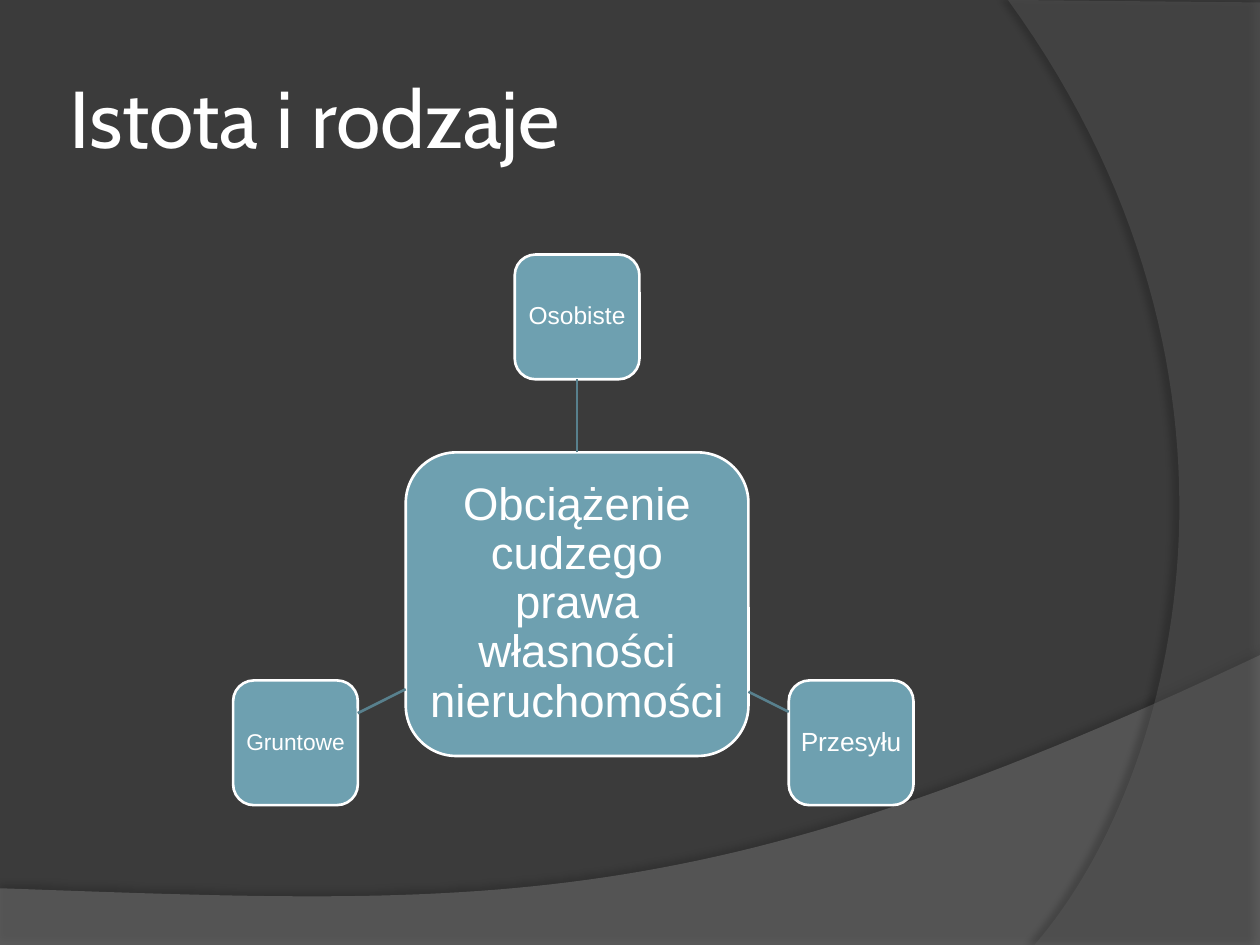
from lxml import etree
from pptx import Presentation
from pptx.dml.color import RGBColor
from pptx.enum.shapes import MSO_CONNECTOR as Connector, MSO_SHAPE as Shape
from pptx.enum.text import MSO_ANCHOR as Anchor, PP_ALIGN as Align
from pptx.oxml.ns import qn
from pptx.util import Inches, Pt

COLORS = {
    "background": "3B3B3B",
    "wave": "7F7F7F",
    "arc": "5E5E5E",
    "shadow": "000000",
    "node": "6EA0B0",
    "link": "58808D",
    "white": "FFFFFF",
}
CENTRE_BOX = (3.22, 3.59, 2.72, 2.41)
NODE_SIZE = 0.99


def rgb(name):
    return RGBColor.from_string(COLORS[name])


def write_text(shape, text, *, size, font, align=Align.LEFT, margin=0.05, spacing=None):
    frame = shape.text_frame
    frame.word_wrap = True
    frame.vertical_anchor = Anchor.MIDDLE
    frame.margin_left = frame.margin_right = Inches(margin)
    frame.margin_top = frame.margin_bottom = Inches(margin)
    paragraph = frame.paragraphs[0]
    paragraph.alignment = align
    paragraph.line_spacing = spacing
    run = paragraph.add_run()
    run.text = text
    run.font.size = Pt(size)
    run.font.name = font
    run.font.color.rgb = rgb("white")


def bezier(start, control_1, control_2, end, steps=60):
    """Return points along a cubic curve, both ends included."""
    points = []
    for step in range(steps + 1):
        t = step / steps
        weights = ((1 - t) ** 3, 3 * t * (1 - t) ** 2, 3 * t * t * (1 - t), t ** 3)
        corners = (start, control_1, control_2, end)
        points.append(tuple(sum(w * c[axis] for w, c in zip(weights, corners))
                            for axis in (0, 1)))
    return points


def add_alpha(color, percent):
    etree.SubElement(color, qn("a:alpha"), val=str(percent * 1000))


def add_backdrop(slide, points, color, opacity, shadow_opacity, distance, direction):
    """Add a translucent outline that casts a soft shadow."""
    vertices = [(Inches(x), Inches(y)) for x, y in points]
    builder = slide.shapes.build_freeform(*vertices[0])
    builder.add_line_segments(vertices[1:], close=True)
    shape = builder.convert_to_shape()
    shape.fill.solid()
    shape.fill.fore_color.rgb = rgb(color)
    shape.line.fill.background()
    properties = shape.element.spPr
    add_alpha(properties.find(qn("a:solidFill"))[0], opacity)
    effects = etree.SubElement(properties, qn("a:effectLst"))
    shadow = etree.SubElement(effects, qn("a:outerShdw"), blurRad=str(Pt(4)),
                              dist=str(Pt(distance)), dir=str(direction * 60000),
                              algn="ctr", rotWithShape="0")
    add_alpha(etree.SubElement(shadow, qn("a:srgbClr"), val=COLORS["shadow"]), shadow_opacity)


def add_background(slide, width, height):
    fill = slide.background.fill
    fill.solid()
    fill.fore_color.rgb = rgb("background")
    wave = bezier((width, 5.2), (5.59, 7.29), (3.91, 7.19), (0, 7.05))
    add_backdrop(slide, [(0, height), (width, height), *wave], "wave", 45, 35, 3.5, 270)
    arc = bezier((8.21, height), (9.35, 6.19), (10.18, 3), (8, 0))
    add_backdrop(slide, [(width, 0.02), (width, height), *arc], "arc", 40, 45, 4, 180)


def add_title(slide, box, text):
    title = slide.shapes.title
    title.left, title.top, title.width, title.height = map(Inches, box)
    write_text(title, text, size=46, font="Cabin")


def add_node(slide, box, text, size, margin):
    node = slide.shapes.add_shape(Shape.ROUNDED_RECTANGLE, *map(Inches, box))
    node.shadow.inherit = False
    node.fill.solid()
    node.fill.fore_color.rgb = rgb("node")
    node.line.color.rgb = rgb("white")
    node.line.width = Pt(1.5)
    write_text(node, text, size=size, font="Arial", align=Align.CENTER,
               margin=margin, spacing=0.9)
    return node


def add_link(slide, start, end):
    link = slide.shapes.add_connector(Connector.STRAIGHT, *map(Inches, start + end))
    link.line.color.rgb = rgb("link")
    link.line.width = Pt(1.5)
    etree.SubElement(link.element.spPr, qn("a:effectLst"))
    return link


def add_diagram(slide, box):
    """Place the central node in the box, with three smaller nodes around it."""
    left, top, width, height = box
    right, middle = left + width, left + width / 2
    centre = add_node(slide, box, "Obciążenie cudzego prawa własności nieruchomości", 26, 0.07)

    upper_top, lower_top = top - 1.57, top + 1.81
    gruntowe_left, przesylu_left = left - 1.37, right + 0.32
    satellites = [
        ("Osobiste", 14, middle - NODE_SIZE / 2, upper_top),
        ("Przesyłu", 15, przesylu_left, lower_top),
        ("Gruntowe", 13, gruntowe_left, lower_top),
    ]
    nodes = [add_node(slide, (x, y, NODE_SIZE, NODE_SIZE), text, size, 0.04)
             for text, size, x, y in satellites]

    upward = add_link(slide, (middle, top), (middle, upper_top + NODE_SIZE))
    upward.begin_connect(centre, 0)
    upward.end_connect(nodes[0], 2)
    add_link(slide, (right, top + 1.9), (przesylu_left, top + 2.06))
    add_link(slide, (left, top + 1.88), (gruntowe_left + NODE_SIZE, top + 2.07))


def main():
    presentation = Presentation()
    presentation.slide_width = Inches(10)
    presentation.slide_height = Inches(7.5)
    slide = presentation.slides.add_slide(presentation.slide_layouts[5])
    add_background(slide, 10, 7.5)
    add_title(slide, (0.5, 0.3, 8.17, 1.25), "Istota i rodzaje")
    add_diagram(slide, CENTRE_BOX)
    presentation.save("out.pptx")


if __name__ == "__main__":
    main()
